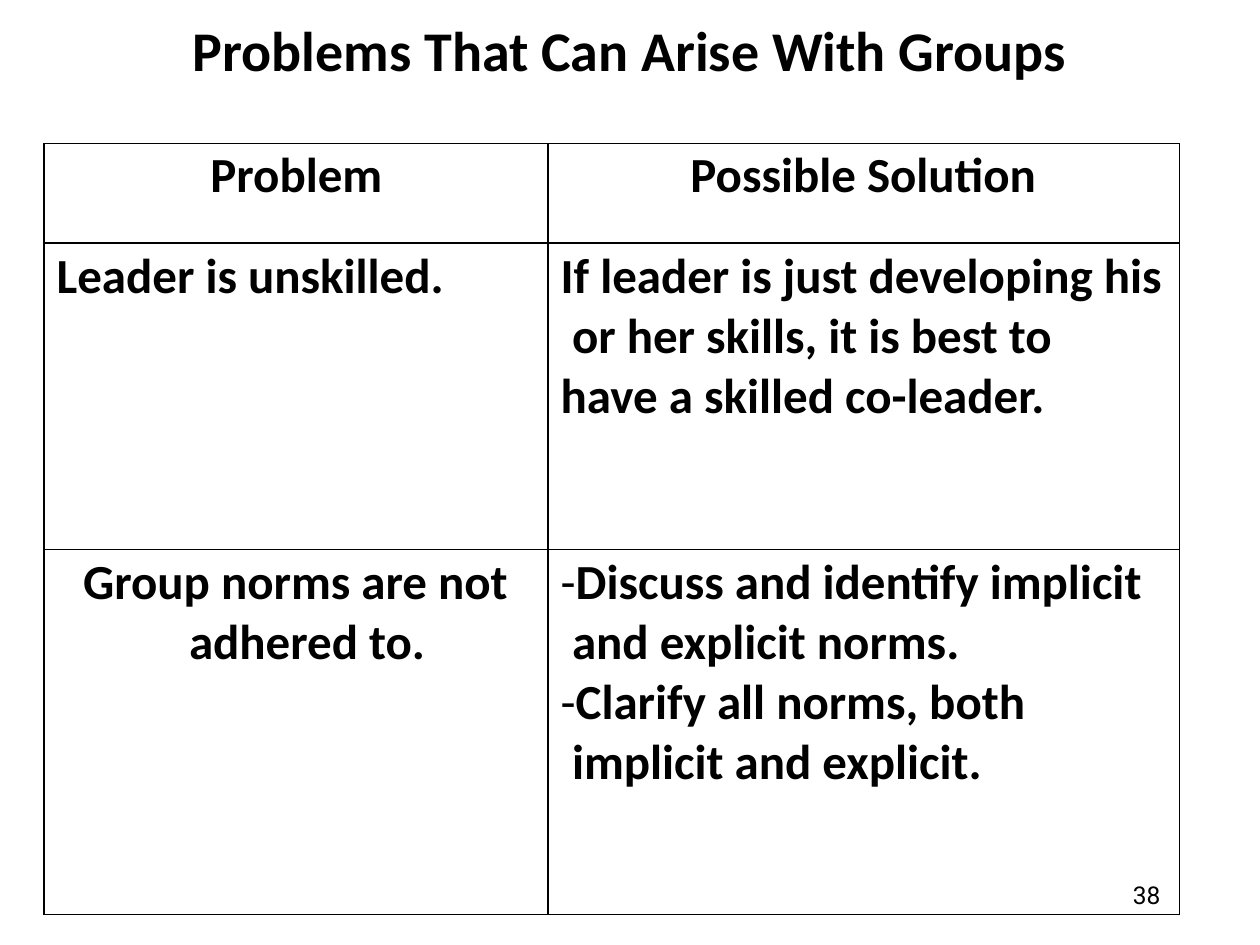
"""Build a slide with a table of group problems and their possible solutions."""
from lxml import etree
from pptx import Presentation, util as u
from pptx.dml.color import RGBColor
from pptx.enum import text
from pptx.oxml import ns

W, H = 10, 7.5
INK = "000000"


def style(para, size, bold=True, face="Calibri"):
    for run in para.runs:
        run.font.size = u.Pt(size)
        run.font.bold = bold
        run.font.name = face
        run.font.color.rgb = RGBColor.from_string(INK)


def frame(cell):
    props = cell._tc.get_or_add_tcPr()
    for k, side in enumerate(("lnL", "lnR", "lnT", "lnB")):
        line = etree.Element(ns.qn("a:" + side), w=str(u.Pt(1)))
        fill = etree.SubElement(line, ns.qn("a:solidFill"))
        etree.SubElement(fill, ns.qn("a:srgbClr"), val=INK)
        props.insert(k, line)


deck = Presentation()
deck.slide_width, deck.slide_height = u.Inches(W), u.Inches(H)
slide = deck.slides.add_slide(deck.slide_layouts[6])

cols = [4, 5.01]
rows = [0.79, 2.43, 2.9]
grid = slide.shapes.add_table(
    len(rows), len(cols), u.Inches(0.35), u.Inches(1.14),
    u.Inches(sum(cols)), u.Inches(sum(rows))).table
grid.first_row = grid.horz_banding = False
for col, width in zip(grid.columns, cols):
    col.width = u.Inches(width)
for row, height in zip(grid.rows, rows):
    row.height = u.Inches(height)

hang = (0.19, -0.09)
cells = [
    [[("Problem", 1.32, 0)], [("Possible Solution", 1.13, 0)]],
    [[("Leader is unskilled.", 0.1, 0)],
     [("If leader is just developing his or her skills, it is best to", *hang),
      ("have a skilled co-leader.", 0.1, 0)]],
    [[("Group norms are not adhered to.", 1.15, -0.84)],
     [("-Discuss and identify implicit and explicit norms.", *hang),
      ("-Clarify all norms, both implicit and explicit.", *hang)]],
]
for r, line in enumerate(cells):
    for c, items in enumerate(line):
        cell = grid.cell(r, c)
        cell.fill.background()
        frame(cell)
        cell.margin_left = cell.margin_right = cell.margin_bottom = 0
        cell.margin_top = u.Inches(0.03 if r else 0.02)
        body = cell.text_frame
        for k, (words, left, first) in enumerate(items):
            para = body.paragraphs[0] if k == 0 else body.add_paragraph()
            dash = words.startswith("-")
            for part in (["-", words[1:]] if dash else [words]):
                para.add_run().text = part
            style(para, 28)
            para.runs[0].font.bold = not dash
            props = para._p.get_or_add_pPr()
            props.set("marL", str(u.Inches(left)))
            props.set("indent", str(u.Inches(first)))
            para.space_before = u.Pt(0)

last = grid.cell(2, 1)
last.margin_right = u.Inches(0.15)
page = last.text_frame.add_paragraph()
page.text = "38"
page.alignment = text.PP_ALIGN.RIGHT
page.space_before = u.Pt(51)
style(page, 14, False, "Roboto")

title = slide.shapes.add_textbox(
    u.Inches(1.52), u.Inches(0.11), u.Inches(6.96), u.Inches(0.56)).text_frame
title.word_wrap = True
title.margin_left = title.margin_top = u.Inches(0.01)
title.margin_right = title.margin_bottom = 0
title.text = "Problems That Can Arise With Groups"
style(title.paragraphs[0], 32)

deck.save("out.pptx")
